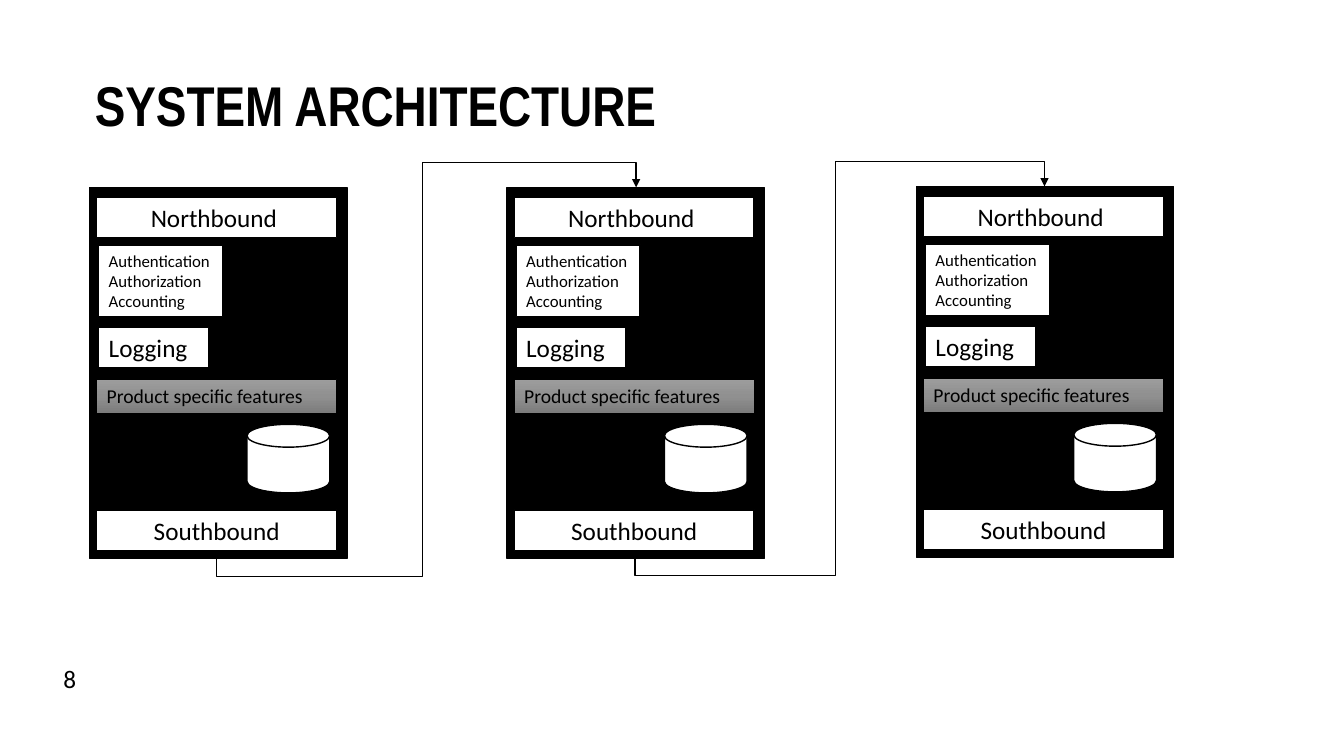
from copy import deepcopy
from lxml import etree
from pptx import Presentation
from pptx.dml.color import RGBColor
from pptx.enum import shapes, text
from pptx.oxml.ns import qn
from pptx.util import Inches, Pt

TITLE = "SYSTEM ARCHITECTURE"
PAGE = "8"
BLACK, WHITE = "000000", "FFFFFF"
SHADES = [(0, "9D9D9D"), (0.5, "909090"), (1, "7C7C7C")]
RECT = shapes.MSO_SHAPE.RECTANGLE
DISK = shapes.MSO_SHAPE.FLOWCHART_MAGNETIC_DISK
LEFT, MID = text.PP_ALIGN.LEFT, text.PP_ALIGN.CENTER

CARDS = [(0.89, 1.86), (5.03, 1.86), (9.09, 1.85)]
PARTS = [
    dict(kind=RECT, at=(0, 0, 2.55, 3.68), fill=BLACK),
    dict(kind=DISK, at=(1.56, 2.35, 0.82, 0.68)),
    dict(at=(0.09, 0.57, 1.23, 0.71), size=12,
         words=["Authentication", "Authorization", "Accounting"]),
    dict(at=(0.09, 1.39, 1.09, 0.4), words=["Logging"]),
    dict(at=(0.07, 1.9, 2.38, 0.34), size=14, fill=None, line=0.5,
         words=["Product specific features"]),
    dict(at=(0.07, 0.1, 2.38, 0.4), words=["Northbound "], align=MID),
    dict(at=(0.07, 3.2, 2.38, 0.4), words=["Southbound"], align=MID),
]
LINKS = [
    dict(start=(6.3, 5.46), end=(10.36, 1.85), bends=(-6900, 48900, 106900)),
    dict(start=(2.15, 5.47), end=(6.31, 1.86), bends=(-6900, 49000, 106900)),
]


def tint(code):
    return RGBColor.from_string(code)


def apply(item, **vals):
    for name, val in vals.items():
        setattr(item, name, val)


def write(frame, lines, size, font="Calibri", bold=False, align=LEFT):
    for num, line in enumerate(lines):
        para = frame.paragraphs[0] if num == 0 else frame.add_paragraph()
        para.alignment = align
        run = para.add_run()
        run.text = line
        apply(run.font, size=Pt(size), name=font, bold=bold)
        run.font.color.rgb = tint(BLACK)


def shade(fill):
    fill.gradient()
    fill.gradient_angle = 270
    first = fill._fill._gradFill.gsLst[0]
    first.addnext(deepcopy(first))
    for stop, (pos, code) in zip(fill.gradient_stops, SHADES):
        stop.position = pos
        stop.color.rgb = tint(code)


def draw(slide, card, at, kind=RECT, fill=WHITE, line=1, words=(), size=18, align=LEFT):
    x, y, w, h = at
    box = slide.shapes.add_shape(
        kind, *map(Inches, (card[0] + x, card[1] + y, w, h)))
    box.shadow.inherit = False
    if fill:
        box.fill.solid()
        box.fill.fore_color.rgb = tint(fill)
    else:
        shade(box.fill)
    box.line.color.rgb = tint(BLACK)
    box.line.width = Pt(line)
    if words:
        apply(box.text_frame, word_wrap=True,
              auto_size=text.MSO_AUTO_SIZE.SHAPE_TO_FIT_TEXT)
        write(box.text_frame, words, size, align=align)


def link(slide, start, end, bends):
    midx, midy = (start[0] + end[0]) / 2, (start[1] + end[1]) / 2
    w, h = start[1] - end[1], end[0] - start[0]
    line = slide.shapes.add_connector(
        shapes.MSO_CONNECTOR.ELBOW,
        *map(Inches, (midx + w / 2, midy + h / 2, midx - w / 2, midy - h / 2)))
    line.line.color.rgb = tint(BLACK)
    line.line.width = Pt(1)
    props = line._element.spPr
    props.find(qn("a:xfrm")).set("rot", "5400000")
    geom = props.find(qn("a:prstGeom"))
    geom.set("prst", "bentConnector5")
    guides = geom.find(qn("a:avLst"))
    if guides is None:
        guides = etree.SubElement(geom, qn("a:avLst"))
    for num, bend in enumerate(bends, 1):
        etree.SubElement(guides, qn("a:gd"), name=f"adj{num}", fmla=f"val {bend}")
    etree.SubElement(props.find(qn("a:ln")), qn("a:tailEnd"), type="triangle")
    etree.SubElement(props, qn("a:effectLst"))


def main():
    deck = Presentation()
    apply(deck, slide_width=Inches(13.33), slide_height=Inches(7.5))
    slide = deck.slides.add_slide(deck.slide_layouts[5])

    title = slide.shapes.title
    apply(title, left=Inches(0.84), top=Inches(0.72),
          width=Inches(10.41), height=Inches(1.25))
    apply(title.text_frame, vertical_anchor=text.MSO_ANCHOR.TOP,
          word_wrap=True, auto_size=text.MSO_AUTO_SIZE.NONE)
    write(title.text_frame, [TITLE], 40, "Arial Narrow", True)
    title.text_frame.paragraphs[0].line_spacing = 0.9

    page = slide.shapes.add_textbox(*map(Inches, (0.53, 6.53, 0.5, 0.4)))
    page.text_frame.word_wrap = True
    write(page.text_frame, [PAGE], 18)

    for card in CARDS:
        for part in PARTS:
            draw(slide, card, **part)
    for item in LINKS:
        link(slide, **item)
    deck.save("out.pptx")


if __name__ == "__main__":
    main()
